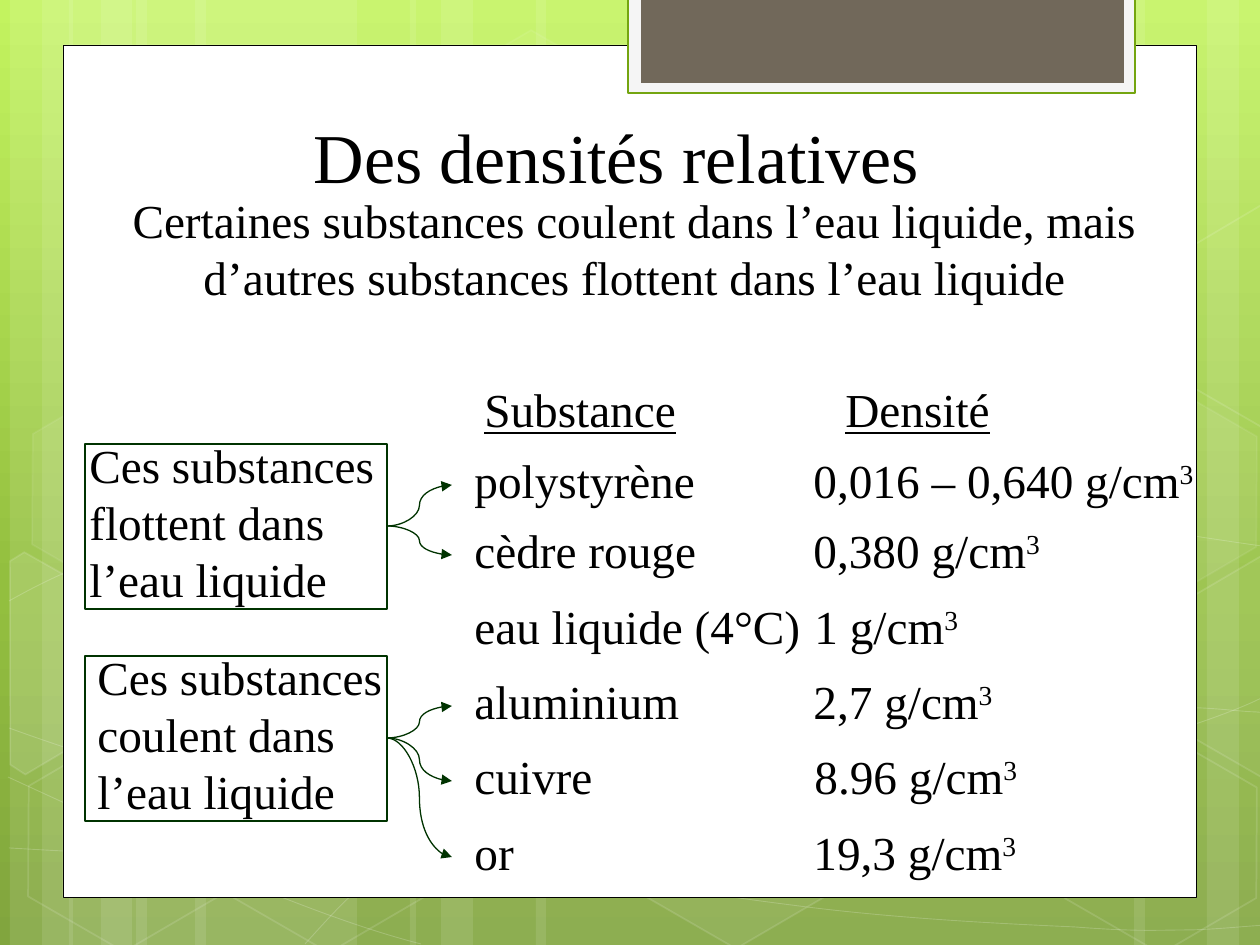
import math
from copy import deepcopy
from dataclasses import dataclass

from pptx import Presentation
from pptx.dml.color import RGBColor
from pptx.enum import shapes, text
from pptx.oxml.ns import qn
from pptx.oxml.xmlchemy import OxmlElement
from pptx import util as u

PX = 914400 / 126
FONT = "Times New Roman"
TILT = 30
WHITE = RGBColor(0xFF, 0xFF, 0xFF)
BLACK = RGBColor(0x00, 0x00, 0x00)
DARK_GREEN = RGBColor(0x00, 0x33, 0x00)
LEAF = RGBColor(0x74, 0xA5, 0x10)
PALE_GREY = RGBColor(0xF5, 0xF5, 0xF5)
BROWN = RGBColor(0x71, 0x68, 0x5A)
GRADIENT = [
    (0, RGBColor(0xC3, 0xF3, 0x5F)),
    (0.62, RGBColor(0x93, 0xBF, 0x3F)),
    (1, RGBColor(0x81, 0xA5, 0x3E)),
]


@dataclass
class Row:
    top: int
    substance: str
    density: str
    density_left: int = 792


@dataclass
class Group:
    top: int
    label_left: int
    label: str
    rows: list[Row]


@dataclass
class Hexagon:
    left: int
    top: int
    fill_alpha: int
    line_alpha: int


@dataclass
class CutHexagon:
    center: tuple[int, int]
    points: list[tuple[int, int]]
    fill_alpha: int


FLOATING = [
    Row(445, "polystyrène", "0,016 – 0,640 g/cm"),
    Row(515, "cèdre rouge", "0,380 g/cm"),
]
WATER = [Row(591, "eau liquide (4°C)", "1 g/cm", 793)]
SINKING = [
    Row(666, "aluminium", "2,7 g/cm"),
    Row(741, "cuivre", "8.96 g/cm", 793),
    Row(817, "or", "19,3 g/cm"),
]
GROUPS = [
    Group(444, 68, "Ces substances flottent dans l’eau liquide", FLOATING),
    Group(656, 76, "Ces substances coulent dans l’eau liquide", SINKING),
]

# Backdrop: (left, width) of stripes, hexagons, cut hexagons, wave control points
STRIPES = [(136, 221), (10, 63), (42, 105), (195, 221), (69, 63), (101, 105),
           (924, 221), (1207, 63), (1134, 105), (536, 388), (410, 63), (441, 105)]
HEXAGONS = [
    Hexagon(421, 45, 4, 8), Hexagon(626, 742, 6, 12), Hexagon(14, 745, 0, 12),
    Hexagon(18, 393, 7, 8), Hexagon(219, 746, 0, 12), Hexagon(949, 571, 10, 12),
    Hexagon(1051, 747, 0, 12), Hexagon(1051, 396, 7, 8),
]
CUT_HEXAGONS = [
    CutHexagon((45, 674), [(10, 561), (24, 552), (121, 607), (120, 718),
                           (25, 774), (10, 765)], 10),
    CutHexagon((1241, 655), [(1167, 611), (1261, 556), (1271, 562), (1271, 772),
                             (1263, 777), (1167, 722)], 4),
    CutHexagon((1241, 304), [(1167, 261), (1261, 205), (1272, 212), (1271, 422),
                             (1263, 427), (1167, 372)], 0),
]
WAVES = [
    [(9, 848), (77, 852), (145, 856), (239, 854), (334, 852), (451, 851), (577, 838),
     (703, 825), (882, 801), (998, 777), (1113, 753), (1231, 716), (1269, 694)],
    [(9, 601), (45, 581), (82, 562), (152, 543), (224, 524), (326, 496), (437, 488),
     (549, 479), (685, 478), (824, 488), (963, 498), (1193, 537), (1269, 547)],
    [(8, 777), (160, 847), (311, 916), (421, 944)],
    [(9, 728), (48, 742), (88, 756), (161, 776), (234, 795), (344, 827), (450, 848),
     (554, 869), (687, 892), (791, 905), (896, 919), (1008, 924), (1075, 927),
     (1140, 932), (1158, 930), (1191, 930), (1223, 929), (1246, 926), (1269, 925)],
    [(305, 944), (328, 919), (350, 893), (381, 871), (411, 848), (454, 823), (489, 805),
     (524, 788), (546, 780), (592, 767), (638, 755), (722, 737), (766, 728),
     (811, 719), (818, 719), (857, 717), (896, 713), (958, 709), (1000, 708),
     (1045, 707), (1116, 708), (1116, 708), (1144, 708), (1173, 708), (1201, 708),
     (1223, 709), (1246, 712), (1256, 712), (1264, 713), (1264, 712), (1268, 713)],
]


def px(length: float) -> u.Emu:
    return u.Emu(round(length * PX))


def set_alpha(element, percent: int) -> None:
    for color in element.iter(qn("a:srgbClr")):
        alpha = OxmlElement("a:alpha")
        alpha.set("val", str(percent * 1000))
        color.append(alpha)


def paint(shape, fill=None, line=None, weight=1.0, fill_alpha=100, line_alpha=100) -> None:
    shape.shadow.inherit = False
    if fill is None or fill_alpha == 0:
        shape.fill.background()
    else:
        shape.fill.solid()
        shape.fill.fore_color.rgb = fill
        if fill_alpha < 100:
            set_alpha(shape.fill._xPr.find(qn("a:solidFill")), fill_alpha)
    if line is None:
        shape.line.fill.background()
    else:
        shape.line.color.rgb = line
        shape.line.width = u.Pt(weight)
        if line_alpha < 100:
            set_alpha(shape.line._ln, line_alpha)


def add_box(page, left: int, top: int, width: int, height: int,
            kind=shapes.MSO_SHAPE.RECTANGLE, **style):
    shape = page.shapes.add_shape(kind, px(left), px(top), px(width), px(height))
    paint(shape, **style)
    return shape


def add_outline(page, points: list, close: bool, **style):
    builder = page.shapes.build_freeform(*points[0], scale=PX)
    builder.add_line_segments(points[1:], close=close)
    shape = builder.convert_to_shape()
    paint(shape, **style)
    return shape


def add_wave(page, controls: list) -> None:
    wave = add_outline(page, controls, False, line=WHITE, weight=0.5, line_alpha=20)
    segments = list(wave._element.iter(qn("a:lnTo")))
    for start in range(0, len(segments), 3):
        curve = OxmlElement("a:cubicBezTo")
        segments[start].addprevious(curve)
        for segment in segments[start:start + 3]:
            curve.append(segment[0])
            segment.getparent().remove(segment)


def add_cut_hexagon(page, item: CutHexagon) -> None:
    cx, cy = item.center
    cos, sin = math.cos(math.radians(TILT)), math.sin(math.radians(TILT))
    upright = [(cx + (x - cx) * cos + (y - cy) * sin, cy - (x - cx) * sin + (y - cy) * cos)
               for x, y in item.points]
    add_outline(page, upright, True, fill=WHITE, fill_alpha=item.fill_alpha,
                line=WHITE, line_alpha=12).rotation = TILT


def add_text(page, content: str, left: int, top: int, width: int, height: int = 81, *,
             size=27, align=text.PP_ALIGN.LEFT, anchor=text.MSO_ANCHOR.TOP,
             underline=False, superscript="", body=True) -> None:
    box = page.shapes.add_textbox(px(left), px(top), px(width), px(height))
    box.text_frame.word_wrap = True
    box.text_frame.vertical_anchor = anchor
    para = box.text_frame.paragraphs[0]
    para.alignment = align
    if body:
        para.line_spacing = u.Pt(32.5)
        para.space_before = u.Pt(1.75)
        para._p.get_or_add_pPr().set("marL", str(px(9)))
    for part in filter(None, (content, superscript)):
        span = para.add_run()
        span.text = part
        span.font.name = FONT
        span.font.size = u.Pt(size)
        span.font.color.rgb = BLACK
        if underline:
            span.font.underline = True
        if part is superscript:
            span._r.get_or_add_rPr().set("baseline", "30000")


def add_arrow(page, x1: int, y1: int, x2: int, y2: int) -> None:
    arrow = page.shapes.add_connector(shapes.MSO_CONNECTOR.CURVE, px(x1), px(y1), px(x2), px(y2))
    arrow.line.color.rgb = DARK_GREEN
    arrow.line.width = u.Pt(0.75)
    head = OxmlElement("a:tailEnd")
    head.set("type", "triangle")
    arrow.line._ln.append(head)
    arrow._element.spPr.append(OxmlElement("a:effectLst"))


def add_backdrop(page) -> None:
    fill = page.background.fill
    fill.gradient()
    fill.gradient_angle = 270
    stops = next(page._element.iter(qn("a:gsLst")))
    stops.insert(1, deepcopy(stops[0]))
    for stop, (position, color) in zip(fill.gradient_stops, GRADIENT):
        stop.position = position
        stop.color.rgb = color

    for left, width in STRIPES:
        add_box(page, left, 0, width, 945, fill=WHITE, fill_alpha=10)
    for wave in WAVES:
        add_wave(page, wave)
    for item in HEXAGONS:
        hexagon = add_box(page, item.left, item.top, 220, 192, shapes.MSO_SHAPE.HEXAGON,
                          fill=WHITE, fill_alpha=item.fill_alpha,
                          line=WHITE, line_alpha=item.line_alpha)
        hexagon.adjustments[0] = 0.285
        hexagon.rotation = TILT
    for item in CUT_HEXAGONS:
        add_cut_hexagon(page, item)

    # White panel and tab
    add_box(page, 63, 45, 1134, 853, fill=WHITE, line=BLACK, weight=0.5)
    add_box(page, 628, -2, 507, 95, fill=PALE_GREY, line=LEAF, weight=1.25)
    add_box(page, 641, -2, 483, 85, fill=BROWN)


def main() -> None:
    deck = Presentation()
    deck.slide_width, deck.slide_height = px(1260), px(945)
    page = deck.slides.add_slide(deck.slide_layouts[6])
    add_backdrop(page)

    # Title and introduction
    add_text(page, "Des densités relatives ", 70, 103, 1111, 101, size=40, body=False,
             align=text.PP_ALIGN.CENTER, anchor=text.MSO_ANCHOR.BOTTOM)
    add_text(page, "Certaines substances coulent dans l’eau liquide, mais "
             "d’autres substances flottent dans l’eau liquide",
             68, 185, 1124, 140, align=text.PP_ALIGN.CENTER)

    # Substances and densities
    add_text(page, "Substance", 463, 374, 246, underline=True)
    add_text(page, "Densité", 824, 374, 185, underline=True)
    for row in FLOATING + WATER + SINKING:
        add_text(page, row.substance, 453, row.top, 372)
        add_text(page, row.density, row.density_left, row.top, 422, superscript="3")

    # Framed labels with arrows to their rows
    for group in GROUPS:
        add_box(page, 85, group.top, 302, 165, fill=WHITE, line=DARK_GREEN, weight=1.25)
        add_text(page, group.label, group.label_left, group.top - 14, 320, 179)
        for row in group.rows:
            add_arrow(page, 387, group.top + 82, 452, row.top + 40)

    deck.save("out.pptx")


if __name__ == "__main__":
    main()
